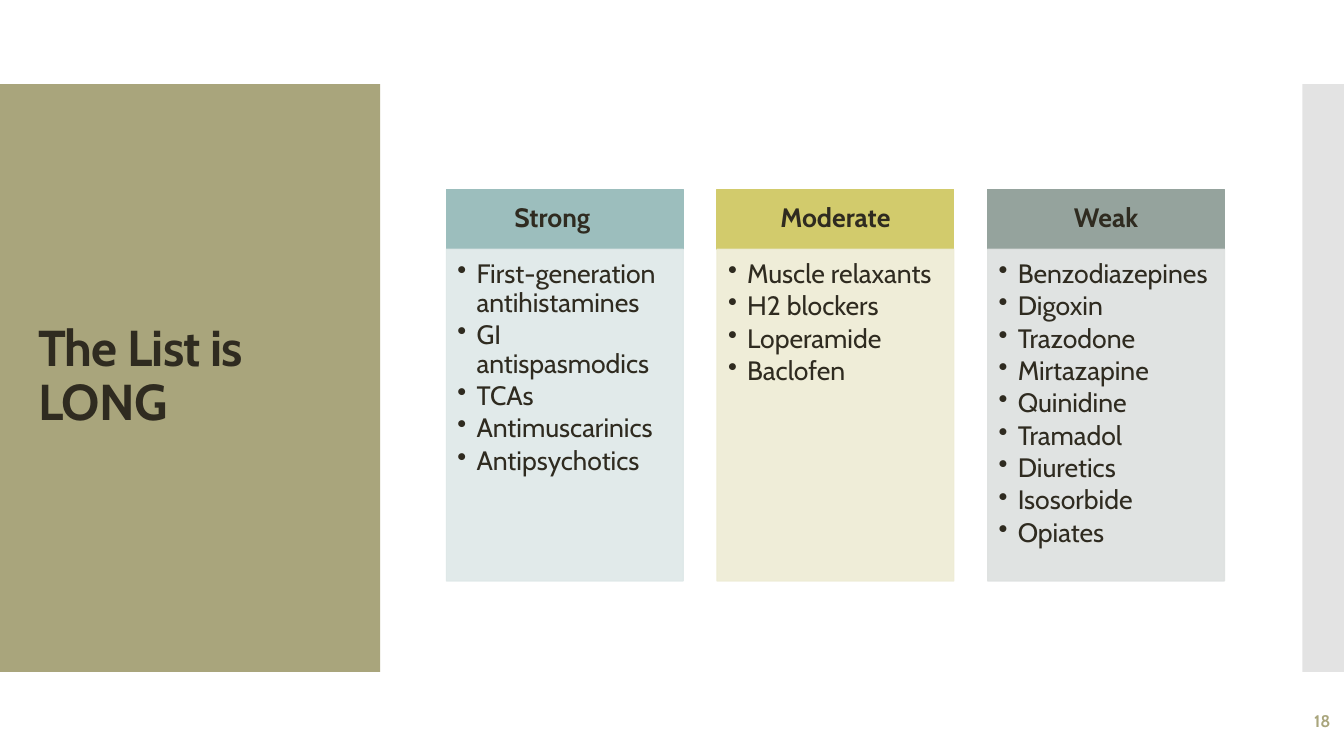
from dataclasses import dataclass

from lxml.etree import SubElement
from pptx import Presentation
from pptx.dml.color import RGBColor
from pptx.enum.shapes import MSO_SHAPE as Shape
from pptx.enum.text import MSO_ANCHOR as Anchor, PP_ALIGN as Align
from pptx.oxml.ns import qn
from pptx.util import Cm, Pt

TITLE = "The List is LONG"
PAGE_NUMBER = "18"
COLUMNS = [
    ("Strong\t", "9CBEBD", "DEE8E8", [
        "First-generation antihistamines", "GI antispasmodics", "TCAs",
        "Antimuscarinics", "Antipsychotics"]),
    ("Moderate", "D2CB6C", "EEECD4", [
        "Muscle relaxants", "H2 blockers", "Loperamide", "Baclofen"]),
    ("Weak", "95A39D", "DDE0DF", [
        "Benzodiazepines", "Digoxin", "Trazodone", "Mirtazapine", "Quinidine",
        "Tramadol", "Diuretics", "Isosorbide", "Opiates"]),
]


@dataclass(frozen=True)
class Theme:
    font: str = "Cabin"
    ink: str = "2F2B20"
    olive: str = "A9A57C"
    strip: str = "C8C8C8"
    title_size: float = 36
    body_size: float = 19
    number_size: float = 12


theme = Theme()
PAGE_WIDTH, PAGE_HEIGHT = 33.87, 19.05
BAND_TOP, BAND_HEIGHT = 2.12, 14.81
PANEL_WIDTH, STRIP_LEFT = 9.58, 32.82
COLUMN_LEFT, COLUMN_PITCH, COLUMN_WIDTH = 11.25, 6.82, 5.97
HEADER_TOP, HEADER_HEIGHT, BODY_HEIGHT = 4.77, 1.51, 8.36
HEADER_INSETS = (0.38, 0.2, 0.38, 0.2)
BODY_INSETS = (0.28, 0.28, 0.38, 0.42)
TEXT_INSETS = (0.25, 0.13, 0.25, 0.13)
BULLET_INDENT = 0.48


def add_block(page, area, color, opacity=100, outlined=False):
    block = page.shapes.add_shape(Shape.RECTANGLE, *map(Cm, area))
    block.shadow.inherit = False
    block.fill.solid()
    block.fill.fore_color.rgb = RGBColor.from_string(color)
    if outlined:
        block.line.color.rgb = RGBColor.from_string(color)
        block.line.width = Pt(0.85)
    else:
        block.line.fill.background()
    if opacity < 100:
        for tint in block.element.spPr.iter(qn("a:srgbClr")):
            SubElement(tint, qn("a:alpha"), val=str(opacity * 1000))
    return block


def write(box, lines, size, color=theme.ink, bold=False, align=Align.LEFT,
          anchor=Anchor.MIDDLE, insets=TEXT_INSETS, spacing=0.9, after=0):
    frame = box.text_frame
    frame.word_wrap = True
    frame.vertical_anchor = anchor
    (frame.margin_left, frame.margin_top,
     frame.margin_right, frame.margin_bottom) = map(Cm, insets)
    frame.text = "\n".join(lines)
    for para in frame.paragraphs:
        para.alignment = align
        para.line_spacing = spacing
        para.space_after = Pt(after)
        para.font.name = theme.font
        para.font.size = Pt(size)
        para.font.bold = bold
        para.font.color.rgb = RGBColor.from_string(color)
    return frame.paragraphs


def add_bullet(para):
    properties = para._p.get_or_add_pPr()
    properties.set("marL", str(Cm(BULLET_INDENT)))
    properties.set("indent", str(-Cm(BULLET_INDENT)))
    bullet = properties.makeelement(qn("a:buChar"), {"char": "•"})
    properties.find(qn("a:defRPr")).addprevious(bullet)


def add_column(page, left, heading, header_color, body_color, drugs):
    header = add_block(page, (left, HEADER_TOP, COLUMN_WIDTH, HEADER_HEIGHT),
                       header_color, outlined=True)
    write(header, [heading], theme.body_size, bold=True, align=Align.CENTER,
          insets=HEADER_INSETS)
    body = add_block(page, (left, HEADER_TOP + HEADER_HEIGHT, COLUMN_WIDTH, BODY_HEIGHT),
                     body_color, opacity=90, outlined=True)
    for para in write(body, drugs, theme.body_size, anchor=Anchor.TOP,
                      insets=BODY_INSETS, after=2.6):
        add_bullet(para)


def main():
    deck = Presentation()
    deck.slide_width, deck.slide_height = Cm(PAGE_WIDTH), Cm(PAGE_HEIGHT)
    page = deck.slides.add_slide(deck.slide_layouts[6])

    add_block(page, (0, BAND_TOP, PANEL_WIDTH, BAND_HEIGHT), theme.olive)
    add_block(page, (STRIP_LEFT, BAND_TOP, PAGE_WIDTH - STRIP_LEFT, BAND_HEIGHT),
              theme.strip, opacity=50)

    title = page.shapes.add_textbox(Cm(0.71), Cm(3.12), Cm(8.18), Cm(12.78))
    for para in write(title, [TITLE], theme.title_size, bold=True):
        for span in para.runs:
            span.font._element.set("spc", "-60")

    for index, column in enumerate(COLUMNS):
        add_column(page, COLUMN_LEFT + index * COLUMN_PITCH, *column)

    number = page.shapes.add_textbox(Cm(29.54), Cm(17.65), Cm(4.24), Cm(1.02))
    write(number, [PAGE_NUMBER], theme.number_size, theme.olive, bold=True,
          align=Align.RIGHT, spacing=1.0)
    deck.save("out.pptx")


if __name__ == "__main__":
    main()
